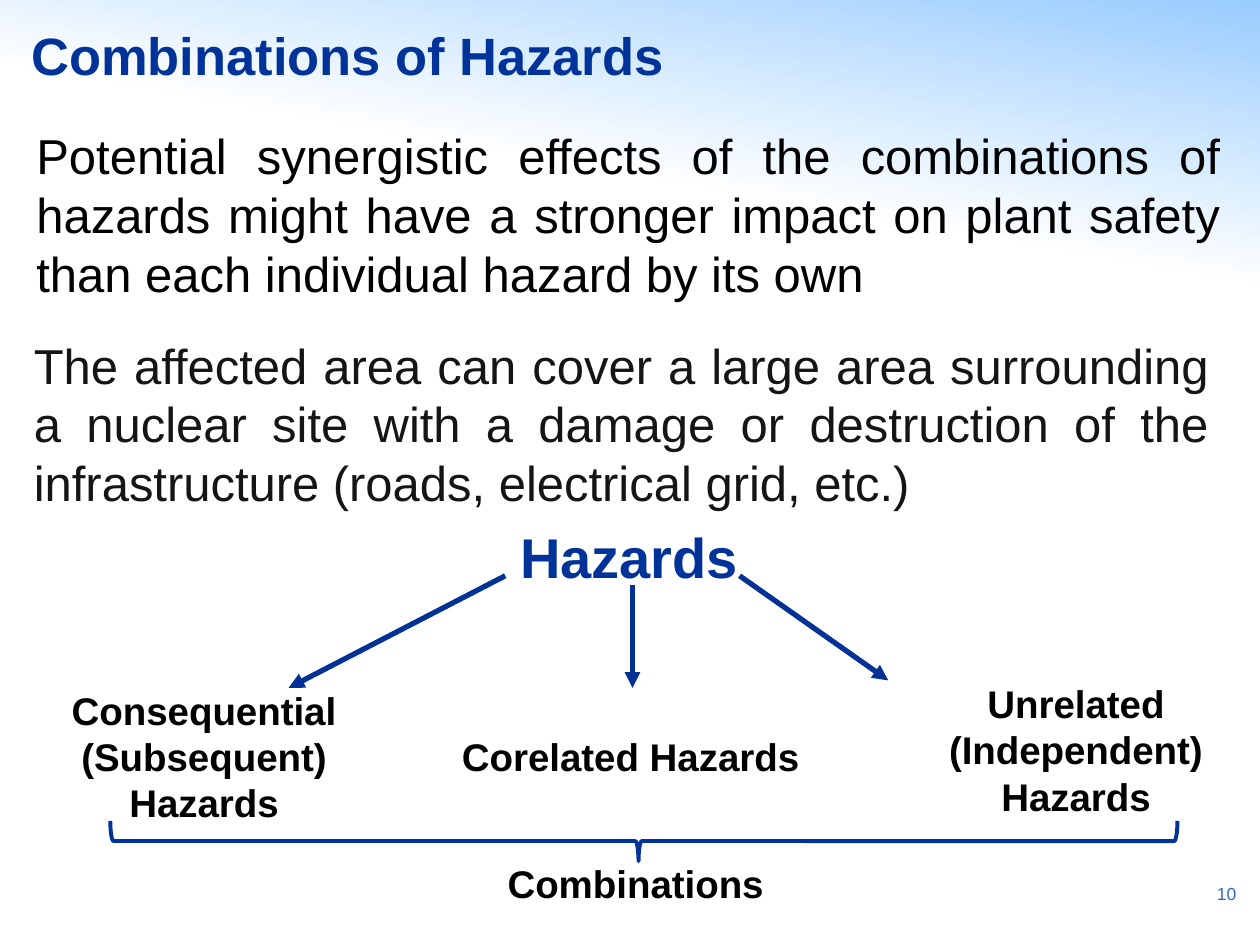
from lxml.etree import SubElement
from pptx import Presentation
from pptx.dml.color import RGBColor
from pptx.enum.shapes import MSO_CONNECTOR, MSO_SHAPE
from pptx.enum.text import MSO_ANCHOR, PP_ALIGN
from pptx.oxml.ns import qn
from pptx.util import Inches, Pt


def rgb(value):
    return RGBColor.from_string(value)


def write(tf, text, size=22, color="000000", bold=False, align=PP_ALIGN.LEFT,
          anchor=MSO_ANCHOR.TOP, font="Arial"):
    tf.word_wrap = True
    tf.vertical_anchor = anchor
    p = tf.paragraphs[0]
    p.alignment = align
    r = p.add_run()
    r.text = text
    r.font.name = font
    r.font.size = Pt(size)
    r.font.bold = bold
    r.font.color.rgb = rgb(color)


class HazardSlide:
    """Holds the style and the current slide and draws its elements."""

    blue = "003399"
    arrow_blue = "003296"
    sky = "99CCFF"

    def __init__(self, prs):
        self.s = prs.slides.add_slide(prs.slide_layouts[6])

    def text(self, box, text, **style):
        sp = self.s.shapes.add_textbox(*map(Inches, box))
        write(sp.text_frame, text, **style)

    def shape(self, kind, box):
        sp = self.s.shapes.add_shape(kind, *map(Inches, box))
        sp.shadow.inherit = False
        return sp

    def sky_band(self, box):
        sp = self.shape(MSO_SHAPE.RECTANGLE, box)
        sp.line.fill.background()
        sp.fill.gradient()
        sp.fill.gradient_angle = 260
        stops = ((0, self.sky), (0.56, "FFFFFF"))
        for stop, (position, color) in zip(sp.fill.gradient_stops, stops):
            stop.position = position
            stop.color.rgb = rgb(color)

    def arrow(self, start, end):
        c = self.s.shapes.add_connector(
            MSO_CONNECTOR.STRAIGHT, *map(Inches, start + end))
        c.line.color.rgb = rgb(self.arrow_blue)
        c.line.width = Pt(3)
        SubElement(c.line._get_or_add_ln(), qn("a:tailEnd"), type="triangle")
        SubElement(c._element.spPr, qn("a:effectLst"))

    def brace(self, box):
        sp = self.shape(MSO_SHAPE.RIGHT_BRACE, box)
        sp.rotation = 90
        sp.adjustments[0] = 0.083
        sp.adjustments[1] = 0.505
        sp.fill.background()
        sp.line.color.rgb = rgb(self.blue)
        sp.line.width = Pt(2.25)


def main():
    prs = Presentation()
    prs.slide_width, prs.slide_height = Inches(10), Inches(7.5)
    slide = HazardSlide(prs)
    slide.sky_band((0, 0, 10, 2.33))
    slide.text((0.15, 0.01, 8.63, 0.84), "Combinations of Hazards", size=30,
               color=slide.blue, bold=True, anchor=MSO_ANCHOR.MIDDLE)
    slide.text((9.56, 6.89, 0.4, 0.4), "10", size=10, color="3366CC",
               anchor=MSO_ANCHOR.MIDDLE)

    statements = (
        ((0.19, 0.95, 9.59, 1.51), "000000",
         "Potential synergistic effects of the combinations of hazards might "
         "have a stronger impact on plant safety than each individual hazard "
         "by its own"),
        ((0.17, 2.61, 9.52, 1.51), "151517",
         "The affected area can cover a large area surrounding a nuclear site "
         "with a damage or destruction of the infrastructure (roads, "
         "electrical grid, etc.)"),
    )
    for box, color, text in statements:
        slide.text(box, text, size=28, color=color, align=PP_ALIGN.JUSTIFY)

    slide.text((4.03, 4.1, 1.96, 0.71), "Hazards", size=32, color=slide.blue,
               bold=True)
    hazard_types = (
        ((0, 5.4, 3.24, 1.1), "Consequential (Subsequent) Hazards"),
        ((3.23, 5.77, 3.55, 1.1), "Corelated Hazards"),
        ((7, 5.35, 3.08, 1.31), "Unrelated (Independent) Hazards"),
    )
    for box, text in hazard_types:
        slide.text(box, text, bold=True, align=PP_ALIGN.CENTER)
    slide.text((3.93, 6.78, 3.08, 0.71), "Combinations", bold=True)

    arrows = (
        ((4.01, 4.57), (2.29, 5.46)),
        ((5.02, 4.64), (5.02, 5.46)),
        ((5.87, 4.57), (7.05, 5.4)),
    )
    for start, end in arrows:
        slide.arrow(start, end)
    slide.brace((4.95, 2.44, 0.32, 8.47))
    prs.save("out.pptx")


if __name__ == "__main__":
    main()
